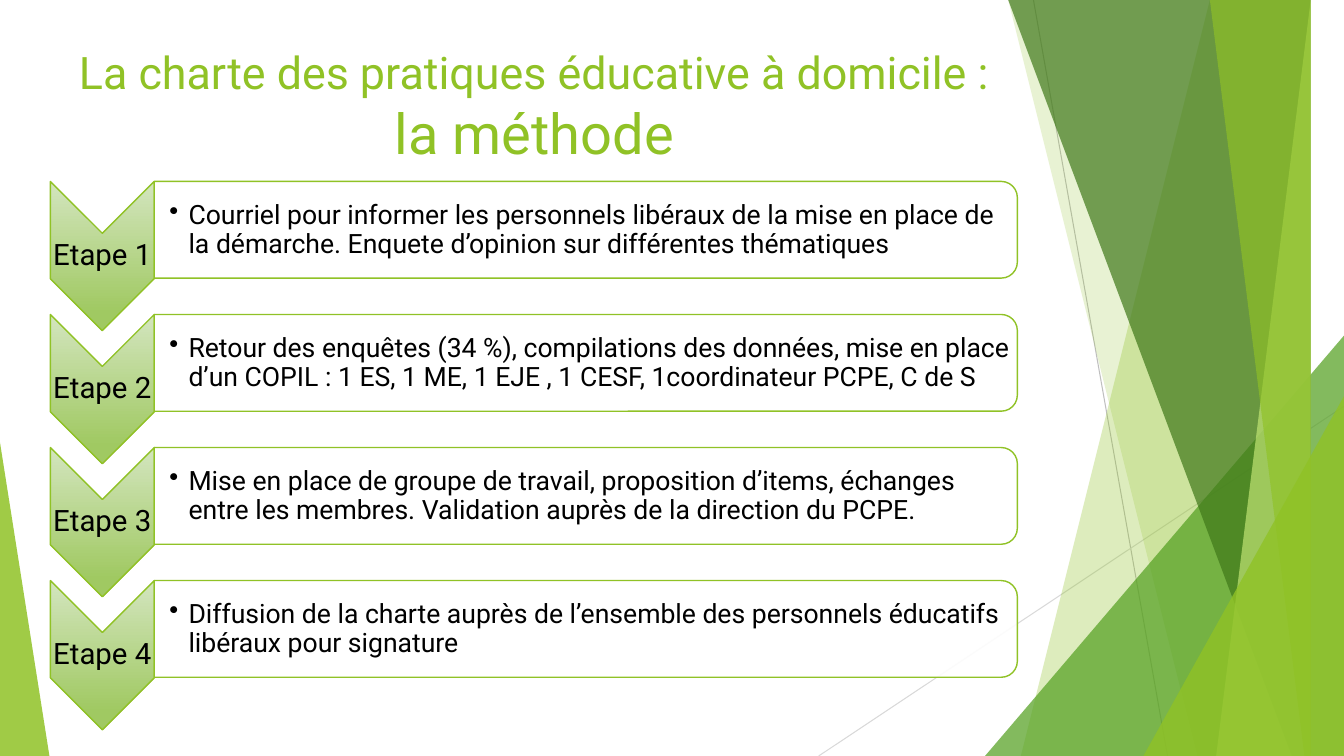
from lxml.etree import SubElement
from pptx import Presentation
from pptx.dml.color import RGBColor
from pptx.enum.shapes import MSO_CONNECTOR, MSO_SHAPE
from pptx.enum.text import MSO_ANCHOR, PP_ALIGN
from pptx.oxml.ns import qn
from pptx.util import Inches, Pt

WIDTH, HEIGHT = 13.33, 7.5
FONT = "Roboto"
LIME = RGBColor(0x90, 0xC2, 0x26)
GREEN = RGBColor(0x54, 0xA0, 0x21)
FOREST = RGBColor(0x3F, 0x78, 0x19)
PALE_LIME = RGBColor(0xC0, 0xE4, 0x74)
CHEVRON_LIGHT = RGBColor(0xD3, 0xE5, 0xBE)
CHEVRON_DARK = RGBColor(0xA0, 0xC9, 0x62)
GREY = RGBColor(0xBF, 0xBF, 0xBF)
LIGHT_GREY = RGBColor(0xD9, 0xD9, 0xD9)
WHITE = RGBColor(0xFF, 0xFF, 0xFF)
BLACK = RGBColor(0, 0, 0)

STEPS = [
    "Courriel pour informer les personnels libéraux de la mise en place de la démarche. "
    "Enquete d’opinion sur différentes thématiques",
    "Retour des enquêtes (34 %), compilations des données, mise en place d’un COPIL : "
    "1 ES, 1 ME, 1 EJE , 1 CESF, 1coordinateur PCPE, C de S",
    "Mise en place de groupe de travail, proposition d’items, échanges entre les membres. "
    "Validation auprès de la direction du PCPE.",
    "Diffusion de la charte auprès de l’ensemble des personnels éducatifs libéraux "
    "pour signature",
]


def fill_solid(shape, color, opacity):
    """Fill with a colour at an opacity in percent."""
    shape.shadow.inherit = False
    shape.fill.solid()
    shape.fill.fore_color.rgb = color
    color_node = shape.fill._xPr.find(qn("a:solidFill"))[0]
    SubElement(color_node, qn("a:alpha"), val=str(opacity * 1000))


def outline(shape):
    shape.line.color.rgb = LIME
    shape.line.width = Pt(1)


def add_line(page, start, end, color):
    line = page.shapes.add_connector(
        MSO_CONNECTOR.STRAIGHT, *[Inches(value) for value in start + end])
    line.line.color.rgb = color
    line.line.width = Pt(0.75)
    SubElement(line._element.spPr, qn("a:effectLst"))


def add_blade(page, top_x, bottom_x, color, opacity):
    """Draw a slanted band running from its left edge to the right of the page."""
    builder = page.shapes.build_freeform(top_x, -0.01, scale=Inches(1))
    builder.add_line_segments(
        [(WIDTH, -0.01), (WIDTH, HEIGHT), (bottom_x, HEIGHT)], close=True)
    blade = builder.convert_to_shape()
    fill_solid(blade, color, opacity)
    blade.line.fill.background()


def add_corner(page, left, top, width, color, opacity, apex):
    """Draw a right triangle standing on the bottom edge of the page."""
    corner = page.shapes.add_shape(
        MSO_SHAPE.ISOSCELES_TRIANGLE, Inches(left), Inches(top),
        Inches(width), Inches(HEIGHT - top))
    corner.adjustments[0] = apex
    fill_solid(corner, color, opacity)
    corner.line.fill.background()


def add_backdrop(page):
    add_line(page, (10.25, 0), (11.58, HEIGHT), GREY)
    add_line(page, (WIDTH, 4.03), (8.12, HEIGHT), LIGHT_GREY)
    add_blade(page, 12.28, 10.04, LIME, 30)
    add_blade(page, 10.5, 11.83, LIME, 20)
    add_corner(page, 9.77, 3.33, 3.56, GREEN, 72, apex=1)
    add_blade(page, 10.21, 12.91, FOREST, 70)
    add_blade(page, 13.03, 11.92, PALE_LIME, 70)
    add_blade(page, 11.96, 13.18, LIME, 65)
    add_corner(page, 11.34, 3.93, 1.99, LIME, 80, apex=1)
    add_corner(page, 0, 4.39, 0.49, LIME, 85, apex=0)


def add_text(page, box, lines, *, color=BLACK, align=PP_ALIGN.LEFT,
             anchor=MSO_ANCHOR.MIDDLE, insets=(0.01, 0.01, 0.01, 0.01),
             spacing=None, bullet=False):
    """Write (text, size) lines as one paragraph with line breaks."""
    text_box = page.shapes.add_textbox(*[Inches(value) for value in box])
    frame = text_box.text_frame
    frame.word_wrap = True
    frame.vertical_anchor = anchor
    (frame.margin_left, frame.margin_top,
     frame.margin_right, frame.margin_bottom) = [Inches(value) for value in insets]
    para = frame.paragraphs[0]
    para.alignment = align
    if spacing:
        para.line_spacing = spacing
    for index, (text, size) in enumerate(lines):
        if index:
            para.add_line_break()
        span = para.add_run()
        span.text = text
        span.font.name = FONT
        span.font.size = Pt(size)
        span.font.color.rgb = color
    if bullet:
        properties = para._p.get_or_add_pPr()
        properties.set("marL", str(Inches(0.19)))
        properties.set("indent", str(-Inches(0.19)))
        SubElement(properties, qn("a:buChar"), char="•")


def add_turned_shape(page, kind, left, top, width, height):
    """Add a shape turned by 90 degrees that covers the given box."""
    shape = page.shapes.add_shape(
        kind, Inches(left + (width - height) / 2), Inches(top + (height - width) / 2),
        Inches(height), Inches(width))
    shape.rotation = 90
    shape.shadow.inherit = False
    outline(shape)
    return shape


def add_step(page, left, top, width, label, description):
    chevron_width, chevron_height, panel_height = 1.03, 1.48, 0.96
    chevron = add_turned_shape(
        page, MSO_SHAPE.CHEVRON, left, top, chevron_width, chevron_height)
    chevron.fill.gradient()
    chevron.fill.gradient_angle = 0
    stops = chevron.fill.gradient_stops
    for stop, position, color in zip(stops, (0, 0.88), (CHEVRON_LIGHT, CHEVRON_DARK)):
        stop.position = position
        stop.color.rgb = color
    add_text(page, (left, top + 0.52, chevron_width, 0.44), [(label, 21)],
             align=PP_ALIGN.CENTER, spacing=0.9)

    panel_left = left + chevron_width
    panel_width = width - chevron_width
    panel = add_turned_shape(page, MSO_SHAPE.ROUND_2_SAME_RECTANGLE,
                             panel_left, top, panel_width, panel_height)
    fill_solid(panel, WHITE, 90)
    add_text(page, (panel_left, top + 0.05, panel_width - 0.04, 0.87),
             [(description, 19)], insets=(0.15, 0.01, 0.01, 0.01),
             spacing=0.9, bullet=True)


def add_steps(page, left, top, width, pitch):
    for index, description in enumerate(STEPS):
        add_step(page, left, top + index * pitch, width, f"Etape {index + 1}", description)


def add_title(page, box):
    add_text(page, box,
             [("La charte des pratiques éducative à domicile :", 32), ("la méthode", 40)],
             color=LIME, align=PP_ALIGN.CENTER, anchor=MSO_ANCHOR.TOP,
             insets=(0.1, 0.08, 0.1, 0.05))


def main():
    deck = Presentation()
    deck.slide_width, deck.slide_height = Inches(WIDTH), Inches(HEIGHT)
    page = deck.slides.add_slide(deck.slide_layouts[6])
    add_backdrop(page)
    add_steps(page, left=0.5, top=1.8, width=9.59, pitch=1.32)
    add_title(page, (0.3, 0.36, 10, 1.44))
    deck.save("out.pptx")


if __name__ == "__main__":
    main()
